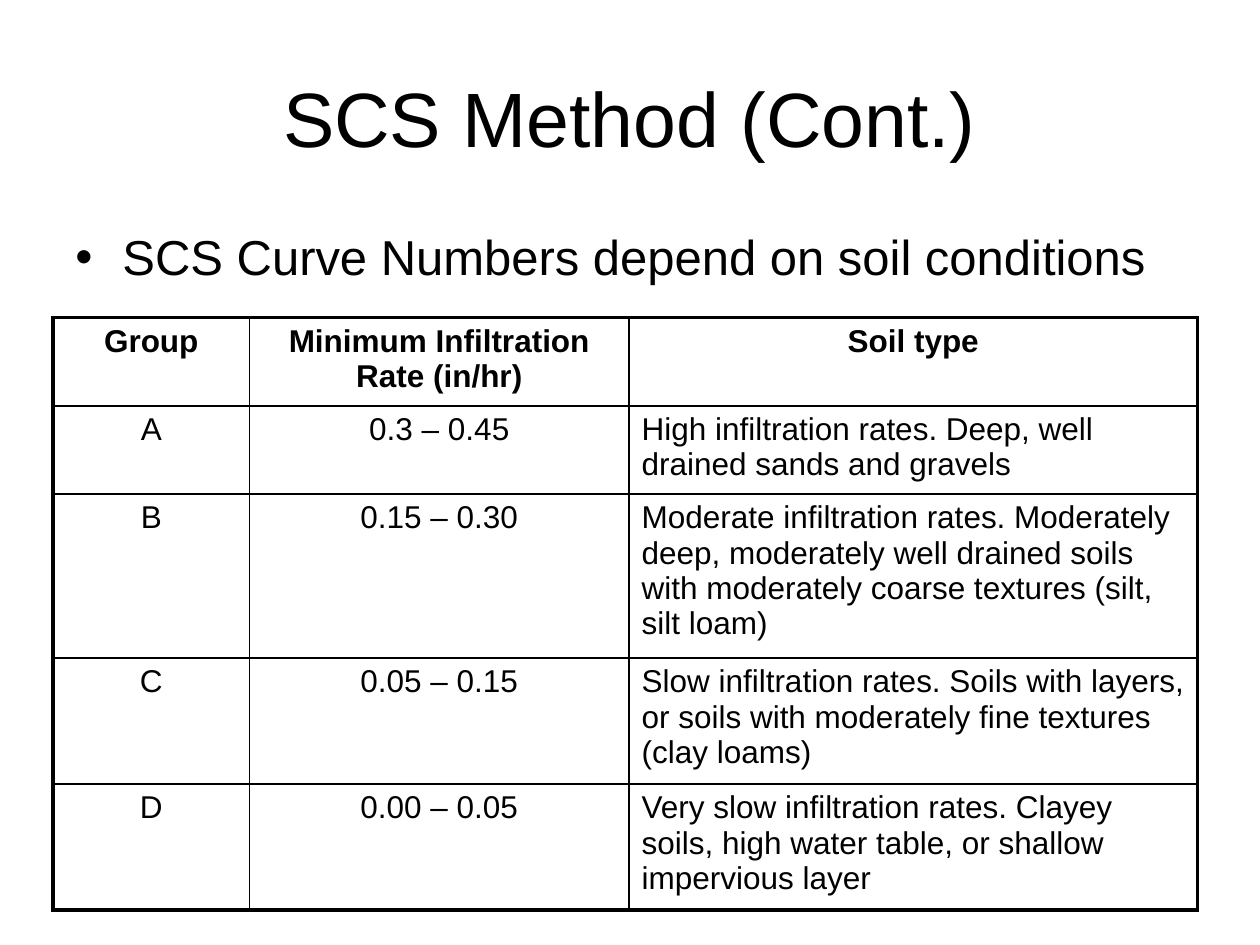
from lxml import etree
from pptx import Presentation
from pptx.dml.color import RGBColor
from pptx.enum.text import MSO_ANCHOR, PP_ALIGN
from pptx.oxml.ns import qn
from pptx.util import Cm, Pt

CENTER, LEFT = PP_ALIGN.CENTER, PP_ALIGN.LEFT
TOP, MIDDLE = MSO_ANCHOR.TOP, MSO_ANCHOR.MIDDLE
COLORS = {"text": "000000", "border": "000000", "background": "FFFFFF"}
FONT = "Arial"

TITLE = "SCS Method (Cont.)"
BULLET = "SCS Curve Numbers depend on soil conditions"
SOIL_GROUPS = [
    ("Group", "Minimum Infiltration Rate (in/hr)", "Soil type"),
    ("A", "0.3 – 0.45", "High infiltration rates. Deep, well drained sands and gravels"),
    ("B", "0.15 – 0.30", "Moderate infiltration rates. Moderately deep, moderately well "
     "drained soils with moderately coarse textures (silt, silt loam)"),
    ("C", "0.05 – 0.15", "Slow infiltration rates. Soils with layers, or soils with "
     "moderately fine textures (clay loams)"),
    ("D", "0.00 – 0.05", "Very slow infiltration rates. Clayey soils, high water table, "
     "or shallow impervious layer"),
]
COLUMN_WIDTHS = [3.96, 7.65, 11.46]
ROW_HEIGHTS = [1.78, 1.78, 3.3, 2.54, 2.54]
TABLE_LEFT, TABLE_TOP = 1.07, 6.4
OUTER_LINE, INNER_LINE = 2.25, 1


def write(text_frame, text, size, alignment, bold=False):
    paragraph = text_frame.paragraphs[0]
    paragraph.text = text
    paragraph.alignment = alignment
    paragraph.font.name = FONT
    paragraph.font.size = Pt(size)
    paragraph.font.bold = bold
    paragraph.font.color.rgb = RGBColor.from_string(COLORS["text"])
    return paragraph


def add_text(slide, box, text, size, alignment, anchor):
    text_frame = slide.shapes.add_textbox(*map(Cm, box)).text_frame
    text_frame.word_wrap = True
    text_frame.vertical_anchor = anchor
    return write(text_frame, text, size, alignment)


def add_bullet(paragraph, indent):
    properties = paragraph._p.get_or_add_pPr()
    properties.set("marL", str(Cm(indent)))
    properties.set("indent", str(-Cm(indent)))
    etree.SubElement(properties, qn("a:buFont"), typeface=FONT)
    etree.SubElement(properties, qn("a:buChar"), char="•")


def set_borders(cell, outer_sides):
    properties = cell._tc.get_or_add_tcPr()
    for position, (side, is_outer) in enumerate(outer_sides.items()):
        width = OUTER_LINE if is_outer else INNER_LINE
        line = etree.Element(qn(f"a:{side}"), w=str(Pt(width)))
        fill = etree.SubElement(line, qn("a:solidFill"))
        etree.SubElement(fill, qn("a:srgbClr"), val=COLORS["border"])
        properties.insert(position, line)


def add_soil_table(slide):
    last_row, last_column = len(ROW_HEIGHTS) - 1, len(COLUMN_WIDTHS) - 1
    table = slide.shapes.add_table(
        len(ROW_HEIGHTS), len(COLUMN_WIDTHS), Cm(TABLE_LEFT), Cm(TABLE_TOP),
        Cm(sum(COLUMN_WIDTHS)), Cm(sum(ROW_HEIGHTS))).table
    table.horz_banding = False
    for column, width in zip(table.columns, COLUMN_WIDTHS):
        column.width = Cm(width)
    for row, height in zip(table.rows, ROW_HEIGHTS):
        row.height = Cm(height)
    for row_index, texts in enumerate(SOIL_GROUPS):
        is_header = row_index == 0
        for column_index, text in enumerate(texts):
            cell = table.cell(row_index, column_index)
            is_description = column_index == last_column and not is_header
            write(cell.text_frame, text, 18, LEFT if is_description else CENTER, is_header)
            cell.fill.background()
            set_borders(cell, {
                "lnL": column_index == 0,
                "lnR": column_index == last_column,
                "lnT": is_header,
                "lnB": row_index == last_row,
            })


def main():
    presentation = Presentation()
    presentation.slide_width, presentation.slide_height = Cm(25.4), Cm(19.05)
    slide = presentation.slides.add_slide(presentation.slide_layouts[6])
    slide.background.fill.solid()
    slide.background.fill.fore_color.rgb = RGBColor.from_string(COLORS["background"])
    add_text(slide, (1.27, 0.76, 22.86, 3.18), TITLE, 44, CENTER, MIDDLE)
    bullet = add_text(slide, (1.27, 4.45, 22.83, 12.57), BULLET, 28, LEFT, TOP)
    add_bullet(bullet, 0.95)
    add_soil_table(slide)
    presentation.save("out.pptx")


if __name__ == "__main__":
    main()
